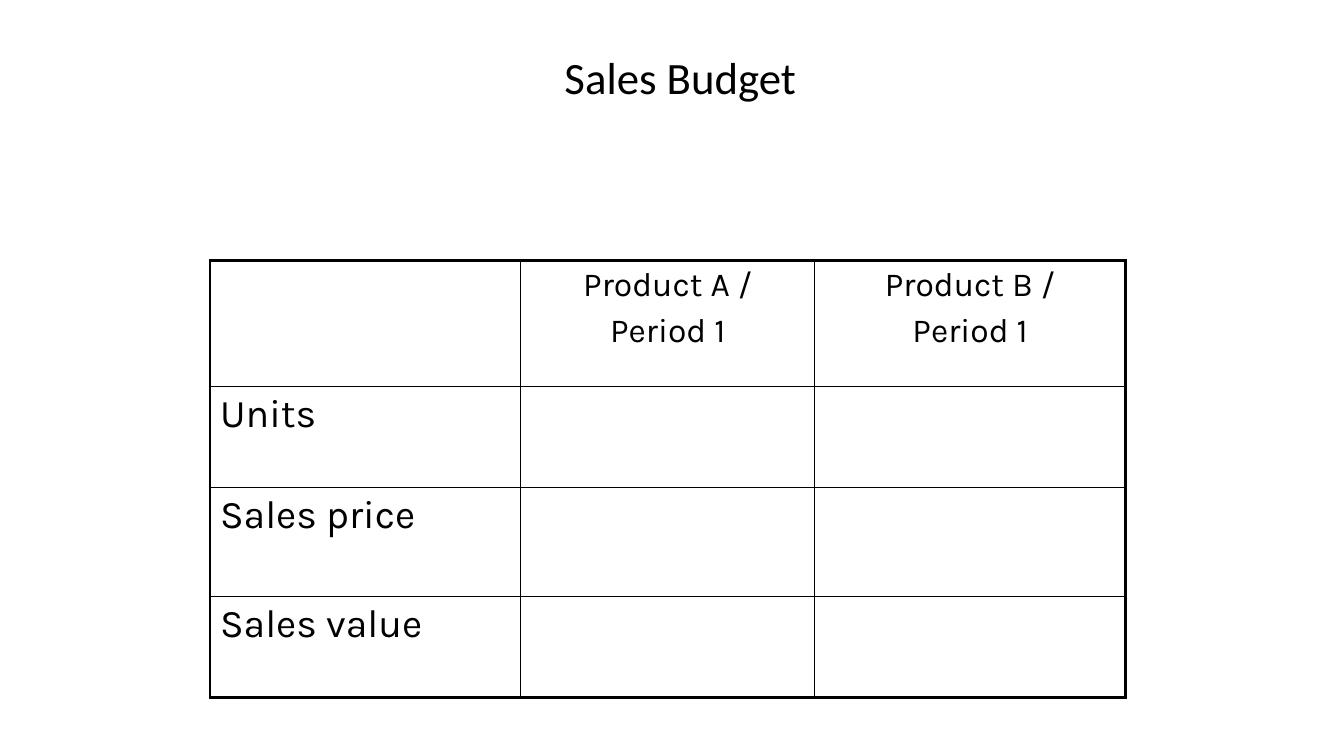
import pptx
import pptx.dml.color
import pptx.enum.text
import pptx.oxml.ns
import pptx.util
from lxml import etree

PX = 9525  # EMU in one px, 96 px to the inch
BLACK = pptx.dml.color.RGBColor(0x00, 0x00, 0x00)
WHITE = pptx.dml.color.RGBColor(0xFF, 0xFF, 0xFF)
CENTER = pptx.enum.text.PP_ALIGN.CENTER
LEFT = pptx.enum.text.PP_ALIGN.LEFT
THIN, THICK = 1, 2.25

COLUMN_WIDTHS = [296, 280, 296]
ROW_HEIGHTS = [120, 96, 104, 96]
BUDGET = [
    ["", "Product A /\nPeriod 1", "Product B /\nPeriod 1"],
    ["Units", "", ""],
    ["Sales price", "", ""],
    ["Sales value", "", ""],
]


def px(length):
    return pptx.util.Emu(length * PX)


def add_child(parent, tag, **attributes):
    return etree.SubElement(parent, pptx.oxml.ns.qn(tag), **attributes)


def style_paragraph(paragraph, font_name, size, alignment):
    paragraph.alignment = alignment
    for run in paragraph.runs:
        run.font.name = font_name
        run.font.size = pptx.util.Pt(size)
        run.font.color.rgb = BLACK


def space_before(paragraph, percent):
    spacing = add_child(paragraph._p.get_or_add_pPr(), "a:spcBef")
    add_child(spacing, "a:spcPct", val=str(percent * 1000))


def set_borders(cell, widths):
    """Draw the left, right, top and bottom borders, ahead of the fill."""
    properties = cell._tc.get_or_add_tcPr()
    for index, (side, width) in enumerate(zip("LRTB", widths)):
        line = add_child(properties, f"a:ln{side}", w=str(pptx.util.Pt(width)))
        color = add_child(add_child(line, "a:solidFill"), "a:srgbClr")
        color.set("val", str(BLACK))
        properties.insert(index, line)


def add_title(slide, text):
    title = slide.shapes.add_textbox(px(240), px(32), px(816), px(72))
    frame = title.text_frame
    frame.word_wrap = True
    frame.vertical_anchor = pptx.enum.text.MSO_ANCHOR.BOTTOM
    frame.text = text
    heading = frame.paragraphs[0]
    heading.line_spacing = 0.9
    style_paragraph(heading, "Calibri", 32, CENTER)


def fill_cell(cell, text, is_header):
    cell.fill.solid()
    cell.fill.fore_color.rgb = WHITE
    cell.text_frame.text = text
    for paragraph in cell.text_frame.paragraphs:
        if is_header:
            style_paragraph(paragraph, "Karla", 24, CENTER)
        else:
            style_paragraph(paragraph, "Karla", 28, LEFT)
        space_before(paragraph, 20)


def add_budget_table(slide, rows):
    frame = slide.shapes.add_table(
        len(ROW_HEIGHTS), len(COLUMN_WIDTHS), px(200), px(248),
        px(sum(COLUMN_WIDTHS)), px(sum(ROW_HEIGHTS)))
    budget = frame.table
    budget.first_row = False
    budget.horz_banding = False
    for column, width in zip(budget.columns, COLUMN_WIDTHS):
        column.width = px(width)
    for row, height in zip(budget.rows, ROW_HEIGHTS):
        row.height = px(height)

    # Thick lines on the outer edge, thin lines inside
    last_row, last_column = len(ROW_HEIGHTS) - 1, len(COLUMN_WIDTHS) - 1
    for r, texts in enumerate(rows):
        for c, text in enumerate(texts):
            cell = budget.cell(r, c)
            fill_cell(cell, text, is_header=r == 0)
            outer = (c == 0, c == last_column, r == 0, r == last_row)
            set_borders(cell, [THICK if edge else THIN for edge in outer])


def main():
    presentation = pptx.Presentation()
    presentation.slide_width = px(1280)
    presentation.slide_height = px(720)
    slide = presentation.slides.add_slide(presentation.slide_layouts[6])
    slide.background.fill.solid()
    slide.background.fill.fore_color.rgb = WHITE

    # Heading
    add_title(slide, "Sales Budget")

    # Budget grid
    add_budget_table(slide, BUDGET)

    presentation.save("out.pptx")


if __name__ == "__main__":
    main()
